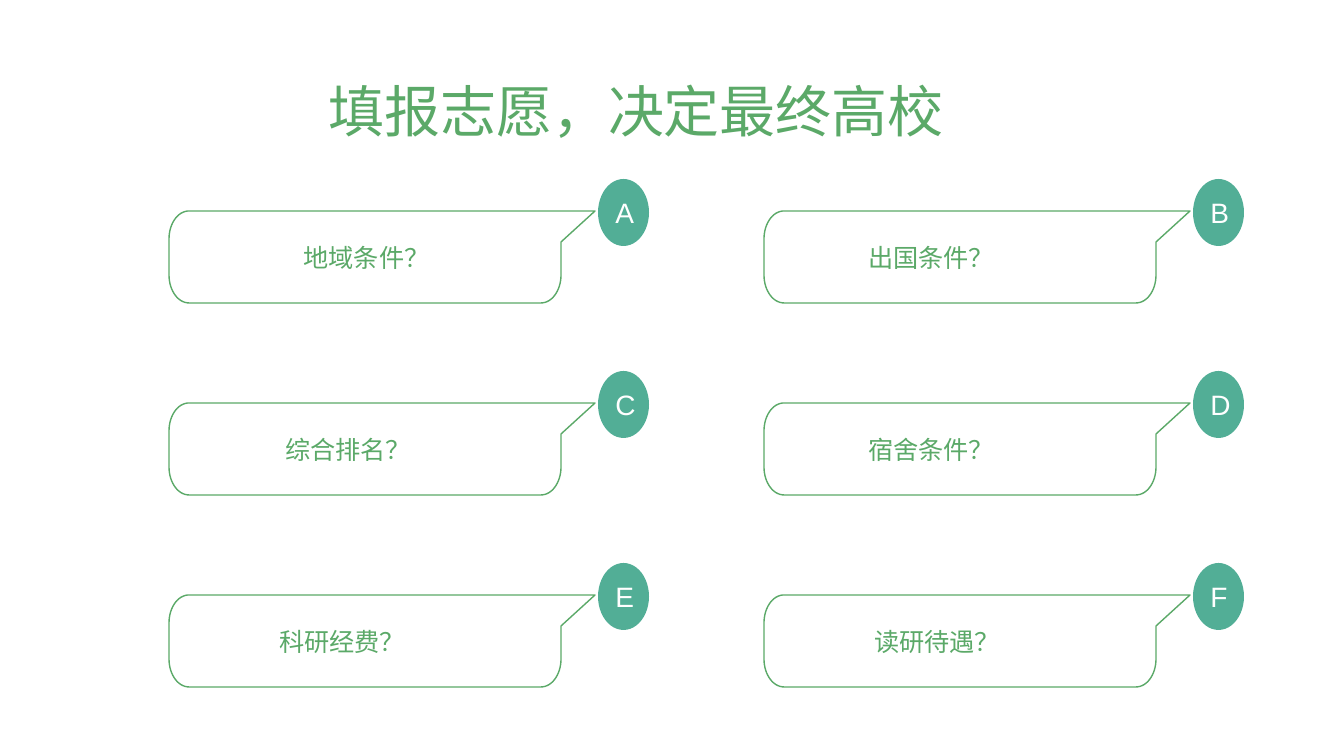
from math import cos, radians, sin

from pptx import Presentation
from pptx.dml.color import RGBColor
from pptx.enum.shapes import MSO_SHAPE
from pptx.enum.text import MSO_ANCHOR, MSO_AUTO_SIZE, PP_ALIGN
from pptx.util import Emu, Pt

COLORS = {"green": "5BA968", "teal": "52AE96", "white": "FFFFFF"}
CONDITIONS = [
    ("A", "地域条件？", None),
    ("B", "出国条件？", 84),
    ("C", "综合排名？", 96),
    ("D", "宿舍条件？", 84),
    ("E", "科研经费？", 90),
    ("F", "读研待遇？", 90),
]


def px(length):
    return Emu(round(length * 914400 / 100.8))


def color(name):
    return RGBColor.from_string(COLORS[name])


def write(frame, text, size, ink, align=PP_ALIGN.CENTER):
    frame.word_wrap = True
    frame.auto_size = MSO_AUTO_SIZE.NONE
    frame.vertical_anchor = MSO_ANCHOR.MIDDLE
    paragraph = frame.paragraphs[0]
    paragraph.alignment = align
    run = paragraph.add_run()
    run.text = text
    run.font.name = "Arial"
    run.font.size = Pt(size)
    run.font.color.rgb = color(ink)


def add_heading(slide, left, top, width, height):
    heading = slide.shapes.title
    heading.left, heading.top = px(left), px(top)
    heading.width, heading.height = px(width), px(height)
    write(heading.text_frame, "填报志愿，决定最终高校", size=40, ink="green")


def bubble_outline(left, top, width, height):
    radius_x, radius_y, tail_width, tail_height = 20, 28, 34, 31
    right, bottom = left + width - tail_width, top + height
    centers = [
        (right - radius_x, bottom - radius_y),
        (left + radius_x, bottom - radius_y),
        (left + radius_x, top + radius_y),
    ]
    points = [(left + width, top), (right, top + tail_height)]
    for corner, (center_x, center_y) in enumerate(centers):
        for step in range(0, 91, 6):
            angle = radians(corner * 90 + step)
            points.append((center_x + radius_x * cos(angle), center_y + radius_y * sin(angle)))
    return [(px(x), px(y)) for x, y in points]


def add_condition(slide, left, top, width, height, letter, condition, indent):
    badge = slide.shapes.add_shape(
        MSO_SHAPE.OVAL, px(left + width + 3), px(top - 32), px(51), px(67)
    )
    badge.shadow.inherit = False
    badge.fill.solid()
    badge.fill.fore_color.rgb = color("teal")
    badge.line.fill.background()
    write(badge.text_frame, letter, size=20, ink="white")

    start, *outline = bubble_outline(left, top, width, height)
    builder = slide.shapes.build_freeform(*start, scale=1.0)
    builder.add_line_segments(outline, close=True)
    bubble = builder.convert_to_shape()
    bubble.shadow.inherit = False
    bubble.fill.solid()
    bubble.fill.fore_color.rgb = color("white")
    bubble.line.color.rgb = color("green")
    bubble.line.width = Pt(1)
    frame = bubble.text_frame
    frame.margin_left, frame.margin_right = px(20 + (indent or 0)), px(51)
    frame.margin_top = frame.margin_bottom = px(5)
    align = PP_ALIGN.CENTER if indent is None else PP_ALIGN.LEFT
    write(frame, condition, size=18, ink="green", align=align)


def add_conditions(slide, left, top, column_step, row_step):
    for index, (letter, condition, indent) in enumerate(CONDITIONS):
        row, column = divmod(index, 2)
        add_condition(
            slide, left + column * column_step, top + row * row_step, 426, 92,
            letter, condition, indent,
        )


def main():
    presentation = Presentation()
    presentation.slide_width, presentation.slide_height = px(1344), px(756)
    slide = presentation.slides.add_slide(presentation.slide_layouts[5])
    add_heading(slide, 220, 23, 832, 174)
    add_conditions(slide, 169, 211, column_step=595, row_step=192)
    presentation.save("out.pptx")


if __name__ == "__main__":
    main()
